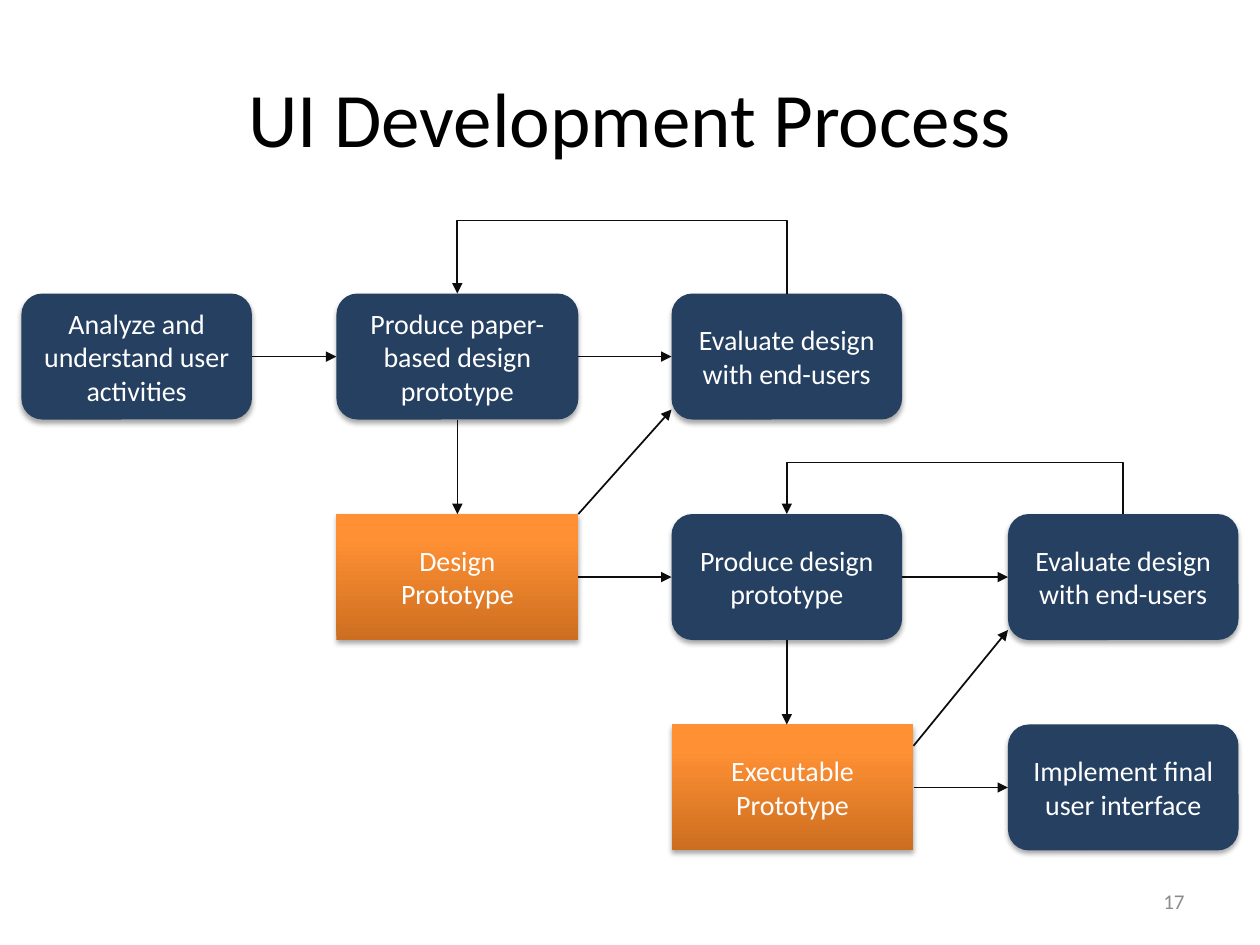
"""Build the UI Development Process flow slide."""
from lxml.etree import SubElement
from pptx import Presentation
from pptx.dml.color import RGBColor
from pptx.enum.shapes import MSO_CONNECTOR, MSO_SHAPE
from pptx.enum.text import MSO_ANCHOR, PP_ALIGN
from pptx.oxml import parse_xml
from pptx.oxml.ns import nsdecls, qn
from pptx.util import Inches, Pt

COLORS = {"title": "000000", "number": "8C8C8C", "activity": "254061",
          "text": "FFFFFF", "line": "0D0D0D", "shadow": "000000"}
GRADIENT = [(0, "CC6E20"), (80, "FF9034"), (100, "FF9136")]
FONT = "Calibri"
COLUMNS = [0.17, 2.67, 5.33, 8]
ROWS = [2.33, 4.08, 5.75]
NARROW, WIDE, HEIGHT = 1.83, 1.92, 1

STEPS = {
    "analyze": ("Analyze and understand user activities", 0, 0, NARROW, "activity"),
    "design": ("Design\vPrototype", 1, 1, WIDE, "product"),
    "paper": ("Produce paper-based design prototype", 1, 0, WIDE, "activity"),
    "evaluate paper": ("Evaluate design with end-users", 2, 0, NARROW, "activity"),
    "produce": ("Produce design prototype", 2, 1, NARROW, "activity"),
    "implement": ("Implement final user interface", 3, 2, NARROW, "activity"),
    "executable": ("Executable Prototype", 2, 2, WIDE, "product"),
    "evaluate design": ("Evaluate design with end-users", 3, 1, NARROW, "activity"),
}
ACROSS = [("analyze", "paper"), ("paper", "evaluate paper"), ("design", "produce"),
          ("produce", "evaluate design"), ("executable", "implement")]
DOWN = [("paper", "design"), ("produce", "executable")]
DIAGONAL = [("design", 0, "evaluate paper", 0.92),
            ("executable", 0.17, "evaluate design", 0.92)]
LOOPS = [("evaluate paper", "paper", 1.75), ("evaluate design", "produce", 3.67)]


def color(name):
    return RGBColor.from_string(COLORS[name])


def spot(step, across, down):
    """Return the point at the given fractions of a step's width and height."""
    _, column, row, width, _ = STEPS[step]
    return COLUMNS[column] + across * width, ROWS[row] + down * HEIGHT


def write(shape, text, size, color_name, align):
    frame = shape.text_frame
    frame.word_wrap = True
    frame.vertical_anchor = MSO_ANCHOR.MIDDLE
    frame.text = text
    paragraph = frame.paragraphs[0]
    paragraph.alignment = align
    for span in paragraph.runs:
        span.font.name = FONT
        span.font.size = Pt(size)
        span.font.color.rgb = color(color_name)


def add_text(page, place, *style):
    write(page.shapes.add_textbox(*map(Inches, place)), *style)


def fill_gradient(box):
    stops = "".join(f'<a:gs pos="{place * 1000}"><a:srgbClr val="{shade}"/></a:gs>'
                    for place, shade in GRADIENT)
    gradient = parse_xml(f'<a:gradFill {nsdecls("a")} rotWithShape="1"><a:gsLst>{stops}'
                         '</a:gsLst><a:lin ang="16200000" scaled="0"/></a:gradFill>')
    box._element.spPr.find(qn("a:prstGeom")).addnext(gradient)


def add_shadow(box):
    box.shadow.inherit = False
    effects = box._element.spPr.find(qn("a:effectLst"))
    effects.append(parse_xml(
        f'<a:outerShdw {nsdecls("a")} blurRad="{Pt(3.1)}" dist="{Pt(1.8)}" dir="5400000" '
        f'rotWithShape="0"><a:srgbClr val="{COLORS["shadow"]}"><a:alpha val="35000"/>'
        '</a:srgbClr></a:outerShdw>'))


def add_step(page, step):
    text, _, _, width, kind = STEPS[step]
    preset = MSO_SHAPE.ROUNDED_RECTANGLE if kind == "activity" else MSO_SHAPE.RECTANGLE
    place = (*spot(step, 0, 0), width, HEIGHT)
    box = page.shapes.add_shape(preset, *map(Inches, place))
    box.line.fill.background()
    if kind == "activity":
        box.fill.solid()
        box.fill.fore_color.rgb = color(kind)
    else:
        fill_gradient(box)
    add_shadow(box)
    write(box, text, 16, "text", PP_ALIGN.CENTER)


def style_arrow(arrow):
    arrow.line.color.rgb = color("line")
    arrow.line.width = Pt(1)
    properties = arrow._element.spPr
    SubElement(properties.find(qn("a:ln")), qn("a:tailEnd"), type="triangle")
    SubElement(properties, qn("a:effectLst"))


def add_arrow(page, start, end):
    style_arrow(page.shapes.add_connector(MSO_CONNECTOR.STRAIGHT,
                                          *map(Inches, (*start, *end))))


def add_loop(page, source, target, top):
    start, end = spot(source, 0.5, 0), spot(target, 0.5, 0)
    corners = [(start[0], top), (end[0], top), end]
    builder = page.shapes.build_freeform(*map(Inches, start))
    builder.add_line_segments([tuple(map(Inches, corner)) for corner in corners], close=False)
    loop = builder.convert_to_shape()
    loop.fill.background()
    style_arrow(loop)


def main():
    deck = Presentation()
    deck.slide_width, deck.slide_height = Inches(10), Inches(7.5)
    page = deck.slides.add_slide(deck.slide_layouts[6])
    add_text(page, (0.5, 0.3, 9, 1.25), "UI Development Process", 44, "title",
             PP_ALIGN.CENTER)
    add_text(page, (7.17, 6.95, 2.33, 0.4), "17", 12, "number", PP_ALIGN.RIGHT)
    for step in STEPS:
        add_step(page, step)
    for source, target in ACROSS:
        add_arrow(page, spot(source, 1, 0.5), spot(target, 0, 0.5))
    for source, target in DOWN:
        start = spot(source, 0.5, 1)
        add_arrow(page, start, (start[0], spot(target, 0, 0)[1]))
    for source, leave, target, arrive in DIAGONAL:
        add_arrow(page, spot(source, 1, leave), spot(target, 0, arrive))
    for loop in LOOPS:
        add_loop(page, *loop)
    deck.save("out.pptx")


if __name__ == "__main__":
    main()
